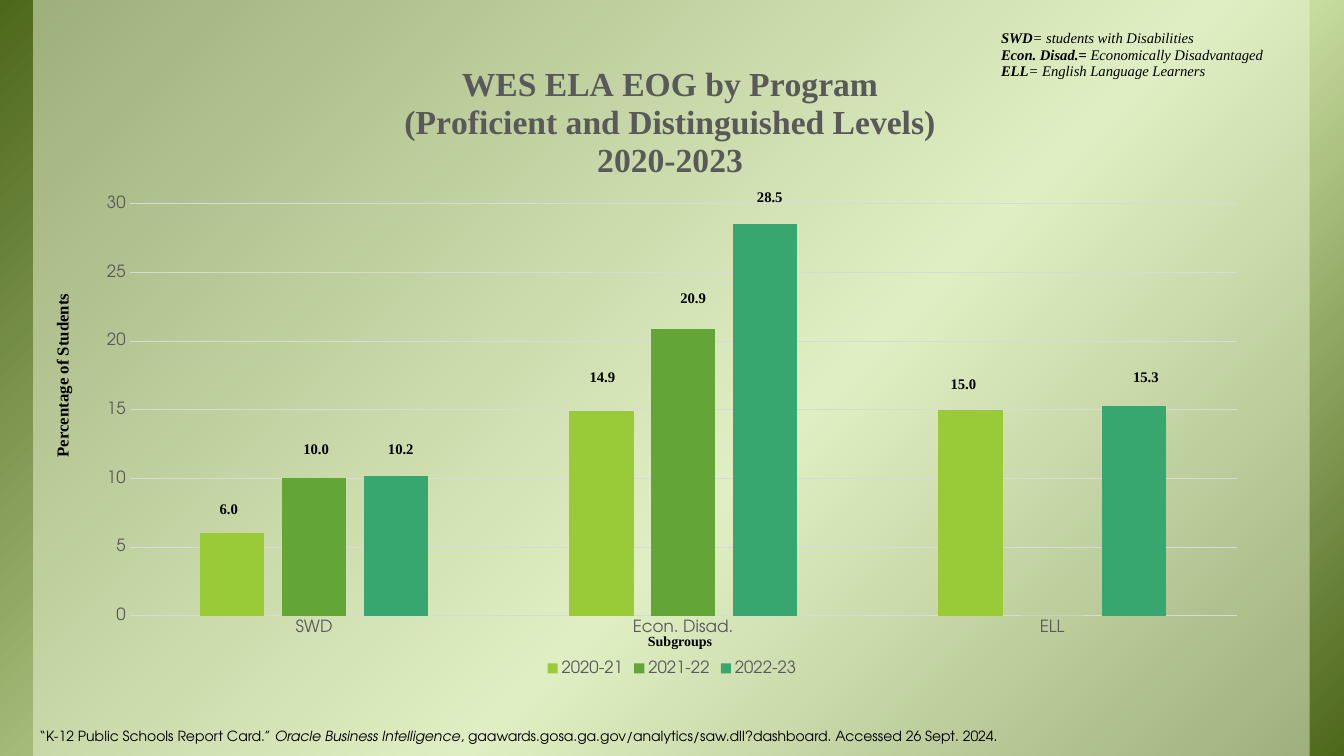
from copy import deepcopy

from lxml import etree
from pptx import Presentation
from pptx import util as u
from pptx.chart import data as chart_data
from pptx.dml import color
from pptx.enum import chart as charts, shapes, text
from pptx.oxml import ns

SERIF, SANS = "Times New Roman", "TeX Gyre Adventor"
BLACK, GREY, RULE = "000000", "595959", "D9D9D9"
BACKDROP = [(0, "4D671B"), (0.58, "D6EAAF"), (1, "4D671B")]
TITLE = ["WES ELA EOG by Program", "(Proficient and Distinguished Levels)", "2020-2023"]
GROUPS = ["SWD", "Econ. Disad.", "ELL"]
YEARS = [
    ("2020-21", (6, 14.9, 15), "99CB38"),
    ("2021-22", (10, 20.9, 0), "63A537"),
    ("2022-23", (10.2, 28.5, 15.3), "37A76F"),
]
BAR_LABELS = [
    ("6.0", 2.08, 4.92), ("10.0", 2.91, 4.33), ("10.2", 3.75, 4.33),
    ("14.9", 5.75, 3.61), ("20.9", 6.65, 2.83), ("28.5", 7.41, 1.83),
    ("15.0", 9.33, 3.68), ("15.3", 11.14, 3.61),
]
KEY = [
    [("SWD", "bi"), ("= students with Disabilities", "i")],
    [("Econ. Disad.= ", "bi"), ("Economically Disadvantaged", "i")],
    [("ELL", "bi"), ("= English Language Learners", "i")],
]
CITATION = [[
    ("“K-12 Public Schools Report Card.” ", ""),
    ("Oracle Business Intelligence", "i"),
    (", gaawards.gosa.ga.gov/analytics/saw.dll?dashboard. Accessed 26 Sept. 2024.", ""),
]]
CHART_AREA = (0.83, 0.42, 11.67, 6.33)
PLOT_AREA = (1.29, 2.02, 10.98, 4.09)


def rgb(code):
    return color.RGBColor.from_string(code)


def style(font, size, face=SANS, ink=BLACK, bold=False, italic=False):
    font.size, font.name = u.Pt(size), face
    font.bold, font.italic = bold, italic
    font.color.rgb = rgb(ink)


def add_text(page, lines, area, size=10.5, face=SERIF, align="LEFT", spacing=0.95, turn=0):
    box = page.shapes.add_textbox(*map(u.Inches, area))
    box.rotation = turn
    frame = box.text_frame
    frame.word_wrap = True
    frame.auto_size = text.MSO_AUTO_SIZE.SHAPE_TO_FIT_TEXT
    for index, line in enumerate(lines):
        para = frame.add_paragraph() if index else frame.paragraphs[0]
        para.alignment = getattr(text.PP_ALIGN, align)
        para.line_spacing = spacing
        for words, marks in line:
            span = para.add_run()
            span.text = words
            style(span.font, size, face, bold="b" in marks, italic="i" in marks)


def add_panel(page, left, width):
    panel = page.shapes.add_shape(
        shapes.MSO_SHAPE.RECTANGLE, u.Inches(left), 0, u.Inches(width), u.Inches(7.5))
    panel.shadow.inherit = False
    panel.line.fill.background()
    return panel


def add_backdrop(page):
    fill = add_panel(page, 0, 13.33).fill
    fill.gradient()
    fill.gradient_angle = 315
    stops = fill._fill._gradFill.find(ns.qn("a:gsLst"))
    stops.append(deepcopy(stops[-1]))
    for stop, (position, code) in zip(fill.gradient_stops, BACKDROP):
        stop.position = position
        stop.color.rgb = rgb(code)

    veil = add_panel(page, 0.33, 12.66)
    veil.fill.solid()
    veil.fill.fore_color.rgb = rgb("EBF5D7")
    tint = veil.fill._xPr.find(".//" + ns.qn("a:srgbClr"))
    etree.SubElement(tint, ns.qn("a:alpha"), val="50000")


def place(layout, **values):
    for child in list(layout):
        layout.remove(child)
    manual = etree.SubElement(layout, ns.qn("c:manualLayout"))
    for name, value in values.items():
        etree.SubElement(manual, ns.qn("c:" + name), val=str(value))


def layout_of(parent, position):
    layout = parent.find(ns.qn("c:layout"))
    if layout is None:
        layout = etree.Element(ns.qn("c:layout"))
        parent.insert(position, layout)
    return layout


def add_bars(page):
    data = chart_data.CategoryChartData()
    data.categories = GROUPS
    for year, values, _ in YEARS:
        data.add_series(year, values)
    chart = page.shapes.add_chart(
        charts.XL_CHART_TYPE.COLUMN_CLUSTERED, *map(u.Inches, CHART_AREA), data).chart
    style(chart.font, 10)

    frame = chart.chart_title.text_frame
    for index, line in enumerate(TITLE):
        para = frame.add_paragraph() if index else frame.paragraphs[0]
        span = para.add_run()
        span.text = line
        style(span.font, 24, SERIF, GREY, bold=True)
    chart.chart_title.include_in_layout = False

    plot = chart.plots[0]
    plot.gap_width, plot.overlap, plot.vary_by_categories = 219, -27, False
    for series, (_, _, code) in zip(plot.series, YEARS):
        series.format.fill.solid()
        series.format.fill.fore_color.rgb = rgb(code)

    for axis in (chart.category_axis, chart.value_axis):
        axis.major_tick_mark = axis.minor_tick_mark = charts.XL_TICK_MARK.NONE
        style(axis.tick_labels.font, 12, ink=GREY)
    chart.value_axis.minimum_scale, chart.value_axis.maximum_scale = 0, 30
    chart.value_axis.major_unit = 5
    chart.value_axis.format.line.fill.background()
    for rule in (chart.category_axis, chart.value_axis.major_gridlines):
        rule.format.line.color.rgb = rgb(RULE)
        rule.format.line.width = u.Pt(0.75)

    chart.has_legend = True
    chart.legend.position = charts.XL_LEGEND_POSITION.BOTTOM
    chart.legend.include_in_layout = False
    style(chart.legend.font, 12, ink=GREY)

    left, top, width, height = CHART_AREA
    x, y, w, h = PLOT_AREA
    root = chart._chartSpace.chart
    place(layout_of(root.find(ns.qn("c:title")), 1),
          xMode="edge", yMode="edge", x=0.27, y=0.03)
    place(layout_of(root.plotArea, 0),
          layoutTarget="inner", xMode="edge", yMode="edge",
          x=round((x - left) / width, 3), y=round((y - top) / height, 3),
          w=round(w / width, 3), h=round(h / height, 3))


def main():
    deck = Presentation()
    deck.slide_width, deck.slide_height = u.Inches(13.33), u.Inches(7.5)
    page = deck.slides.add_slide(deck.slide_layouts[6])
    add_backdrop(page)
    add_bars(page)
    add_text(page, KEY, (9.83, 0.25, 3.25, 0.63))
    for value, left, top in BAR_LABELS:
        add_text(page, [[(value, "b")]], (left, top, 0.5, 0.28))
    add_text(page, [[("Percentage of Students", "b")]], (-0.71, 3.58, 2.67, 0.29),
             size=12, align="CENTER", turn=270)
    add_text(page, [[("Subgroups", "b")]], (5.41, 6.24, 2.67, 0.26), size=10, align="CENTER")
    add_text(page, CITATION, (0.29, 7.17, 12.75, 0.27), size=10, face=SANS, spacing=1.0)
    deck.save("out.pptx")


if __name__ == "__main__":
    main()
